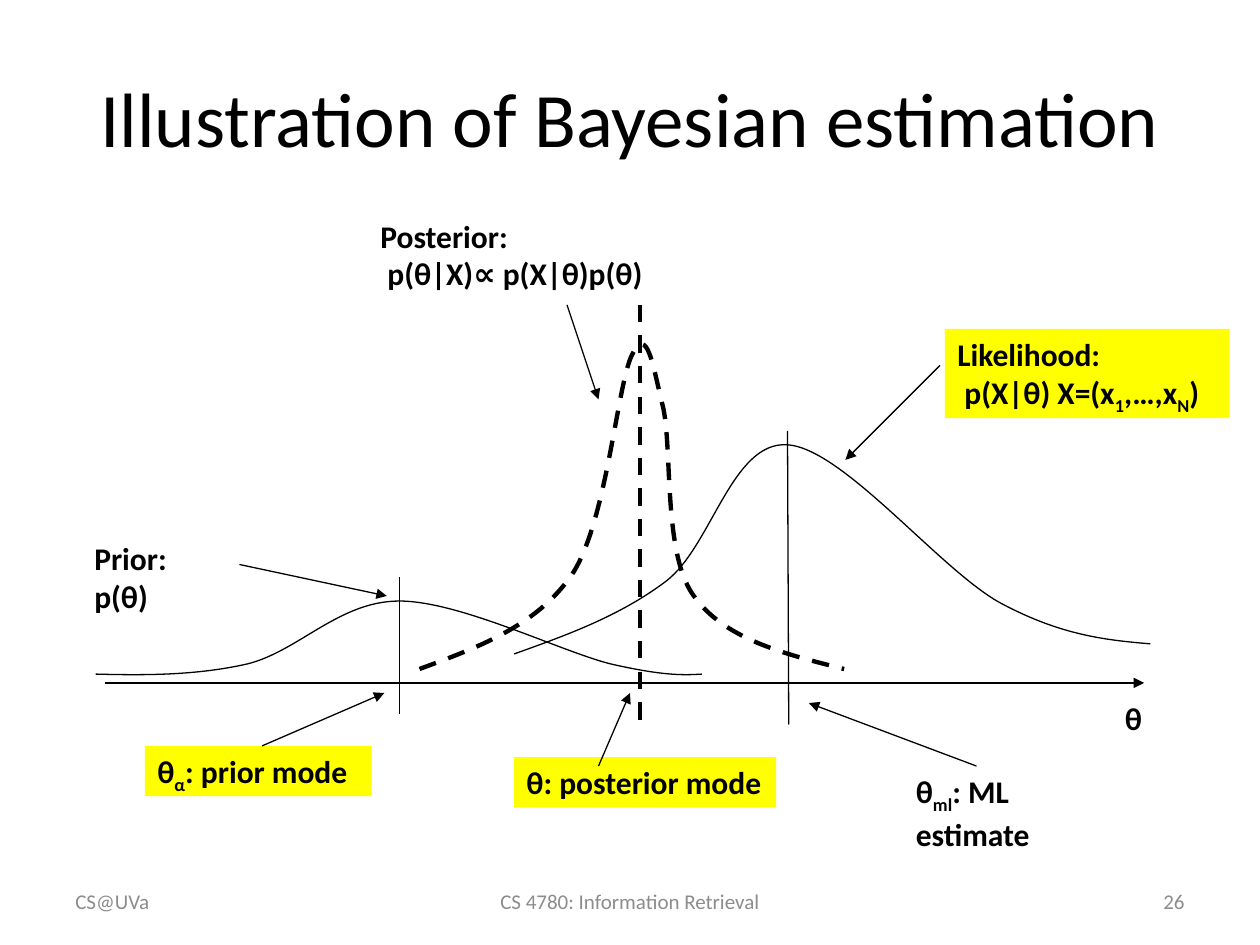
from dataclasses import dataclass

from lxml.etree import SubElement
from pptx import Presentation
from pptx.dml.color import RGBColor
from pptx.enum.dml import MSO_LINE_DASH_STYLE as Dash
from pptx.enum.shapes import MSO_CONNECTOR as Connector
from pptx.enum.text import MSO_ANCHOR as Anchor, PP_ALIGN as Align
from pptx.oxml.ns import qn
from pptx.util import Inches, Pt

BLACK = RGBColor(0x00, 0x00, 0x00)
GRAY = RGBColor(0x8C, 0x8C, 0x8C)
YELLOW = RGBColor(0xFF, 0xFF, 0x00)

TITLE_FONT = {"name": "Calibri", "size": Pt(44), "bold": False}
LABEL_FONT = {"name": "Calibri", "size": Pt(18), "bold": True}
FOOTER_FONT = {"name": "Calibri", "size": Pt(12), "bold": False}
THIN = {"width": Pt(0.75)}
DASHED = {"width": Pt(2.5), "dash_style": Dash.DASH}


@dataclass
class Box:
    left: float
    top: float
    width: float
    height: float

    def point(self, x, y):
        return Inches(self.left + x), Inches(self.top + y)

    def inner(self, x, y, width, height):
        return Box(self.left + x, self.top + y, width, height)

    def frame(self):
        return [Inches(v) for v in (self.left, self.top, self.width, self.height)]


def apply_format(target, values):
    for name, value in values.items():
        setattr(target, name, value)


def format_line(line, values):
    line.color.rgb = BLACK
    apply_format(line, values)


def write_paragraph(paragraph, parts, font, color=BLACK, align=Align.LEFT):
    paragraph.alignment = align
    for index, part in enumerate(parts):
        run = paragraph.add_run()
        run.text = part
        apply_format(run.font, font)
        run.font.color.rgb = color
        if index % 2:
            run._r.get_or_add_rPr().set("baseline", "-25000")


def add_label(shapes, box, *lines, fill=None):
    shape = shapes.add_textbox(*box.frame())
    frame = shape.text_frame
    frame.word_wrap = True
    if fill is not None:
        shape.fill.solid()
        shape.fill.fore_color.rgb = fill
    for index, parts in enumerate(lines):
        paragraph = frame.add_paragraph() if index else frame.paragraphs[0]
        write_paragraph(paragraph, parts, LABEL_FONT)


def add_line(shapes, box, start, end, style=THIN, arrow=False):
    line = shapes.add_connector(Connector.STRAIGHT, *box.point(*start), *box.point(*end))
    format_line(line.line, style)
    if arrow:
        SubElement(line.line._get_or_add_ln(), qn("a:tailEnd"), type="triangle")
    SubElement(line._element.spPr, qn("a:effectLst"))


def bend_segments(curve):
    outline = next(curve._element.iter(qn("a:path")))
    segments = outline.findall(qn("a:lnTo"))
    for first in range(0, len(segments), 3):
        bezier = SubElement(outline, qn("a:cubicBezTo"))
        for segment in segments[first:first + 3]:
            bezier.append(segment[0])
            outline.remove(segment)


def add_curve(shapes, box, knots, style=THIN):
    builder = shapes.build_freeform(*box.point(*knots[0]))
    builder.add_line_segments([box.point(*knot) for knot in knots[1:]], close=False)
    curve = builder.convert_to_shape()
    bend_segments(curve)
    curve.shadow.inherit = False
    curve.fill.background()
    format_line(curve.line, style)


def add_title(slide, box):
    title = slide.shapes.title
    title.left, title.top, title.width, title.height = box.frame()
    title.text_frame.vertical_anchor = Anchor.MIDDLE
    write_paragraph(title.text_frame.paragraphs[0], ["Illustration of Bayesian estimation"],
                    TITLE_FONT, align=Align.CENTER)


def add_prior(slide, box):
    shapes = slide.shapes.add_group_shape().shapes
    add_curve(shapes, box, [
        (0.26, 3.85), (0.66, 3.86), (1.06, 3.86), (1.46, 3.77),
        (1.87, 3.67), (2.19, 3.27), (2.67, 3.27),
        (3.15, 3.27), (3.95, 3.67), (4.35, 3.77),
        (4.75, 3.86), (4.91, 3.86), (5.07, 3.85)])
    add_label(shapes, box.inner(0.15, 2.73, 1.19, 0.37), ["Prior: p(θ)"])
    add_line(shapes, box, (1.4, 2.98), (2.57, 3.23), arrow=True)


def add_likelihood(slide, box):
    shapes = slide.shapes.add_group_shape().shapes
    add_curve(shapes, box, [
        (3.58, 3.69), (4, 3.54), (4.42, 3.39), (4.79, 3.11),
        (5.15, 2.83), (5.31, 2), (5.75, 2.03),
        (6.19, 2.06), (6.95, 3.01), (7.43, 3.28),
        (7.91, 3.54), (8.27, 3.58), (8.63, 3.61)])
    add_label(shapes, box.inner(7, 1.11, 2.26, 0.71), ["Likelihood:"],
              [" p(X|θ) X=(x", "1", ",…,x", "N", ")"], fill=YELLOW)
    add_line(shapes, box, (6.96, 1.4), (6.21, 2.15), arrow=True)


def add_posterior(slide, box):
    add_label(slide.shapes, box.inner(2.42, 0.17, 2.29, 0.9),
              ["Posterior:"], [" p(θ|X)∝ p(X|θ)p(θ)"])
    shapes = slide.shapes.add_group_shape().shapes
    add_curve(shapes, box, [
        (2.83, 3.81), (3.29, 3.64), (3.76, 3.47), (4.04, 3.06),
        (4.32, 2.64), (4.4, 1.53), (4.52, 1.31),
        (4.64, 1.08), (4.68, 1.4), (4.76, 1.72),
        (4.84, 2.04), (4.76, 2.88), (5, 3.22),
        (5.24, 3.57), (5.72, 3.69), (6.2, 3.81)], DASHED)
    add_line(shapes, box, (4, 0.92), (4.25, 1.67), arrow=True)


def add_mode(slide, box, axis, style, label_box, parts, arrow, fill=None):
    add_line(slide.shapes, box, *axis, style)
    shapes = slide.shapes.add_group_shape().shapes
    add_label(shapes, box.inner(*label_box), parts, fill=fill)
    add_line(shapes, box, *arrow, arrow=True)


def add_diagram(slide, box):
    add_line(slide.shapes, box, (0.33, 3.92), (8.58, 3.92), arrow=True)
    add_prior(slide, box)
    add_likelihood(slide, box)
    add_posterior(slide, box)
    add_label(slide.shapes, box.inner(8.33, 4, 0.32, 0.37), ["θ"])
    add_mode(slide, box, ((2.67, 3.08), (2.67, 4.17)), THIN, (0.65, 4.42, 1.8, 0.4),
             ["θ", "α", ": prior mode"], ((1.58, 4.42), (2.55, 4)), YELLOW)
    add_mode(slide, box, ((5.75, 1.92), (5.76, 4.25)), THIN, (6.67, 4.58, 1.75, 0.37),
             ["θ", "ml", ": ML estimate"], ((7.25, 4.58), (5.92, 4.08)))
    add_mode(slide, box, ((4.58, 0.92), (4.58, 4.25)), DASHED, (3.58, 4.51, 2.08, 0.4),
             ["θ: posterior mode"], ((4.25, 4.58), (4.5, 4)), YELLOW)


def add_footer(slide, box):
    columns = [("CS@UVa", 2.33, Align.LEFT),
               ("CS 4780: Information Retrieval", 3.17, Align.CENTER),
               ("26", 2.33, Align.RIGHT)]
    gap = (box.width - sum(width for _, width, _ in columns)) / (len(columns) - 1)
    x = 0
    for text, width, align in columns:
        shape = slide.shapes.add_textbox(*box.inner(x, 0, width, box.height).frame())
        shape.text_frame.word_wrap = True
        shape.text_frame.vertical_anchor = Anchor.MIDDLE
        write_paragraph(shape.text_frame.paragraphs[0], [text], FOOTER_FONT, GRAY, align)
        x += width + gap


def main():
    presentation = Presentation()
    presentation.slide_width, presentation.slide_height = Inches(10), Inches(7.5)
    slide = presentation.slides.add_slide(presentation.slide_layouts.get_by_name("Title Only"))
    add_title(slide, Box(0.5, 0.3, 9, 1.25))
    add_diagram(slide, Box(0.5, 1.5, 9.26, 5))
    add_footer(slide, Box(0.5, 6.95, 9, 0.4))
    presentation.save("out.pptx")


if __name__ == "__main__":
    main()
